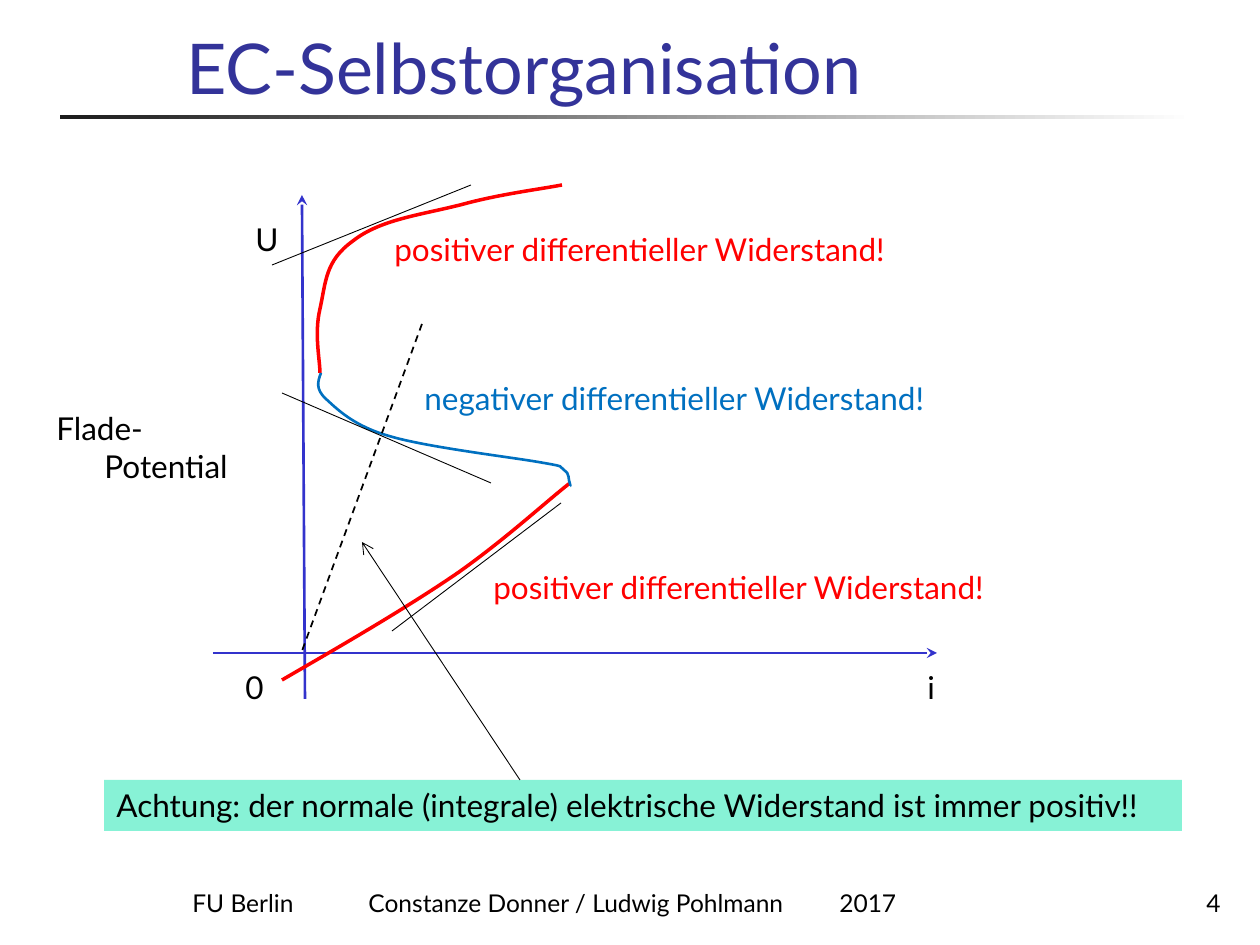
from dataclasses import dataclass

from lxml.etree import SubElement
from pptx import Presentation
from pptx.dml.color import RGBColor as Rgb
from pptx.enum.dml import MSO_LINE as Dash
from pptx.enum.shapes import MSO_CONNECTOR as Connector, MSO_SHAPE as Preset
from pptx.enum.text import MSO_ANCHOR as Anchor, PP_ALIGN as Align
from pptx.oxml.ns import qn
from pptx.util import Emu, Pt

PX = 914400 / 126


@dataclass(frozen=True)
class Theme:
    font: str = "Lato"
    title_size: int = 40
    label_size: int = 18
    footer_size: int = 14
    title: str = "333399"
    ink: str = "000000"
    axis: str = "3333CC"
    positive: str = "FF0000"
    negative: str = "0070C0"
    notice: str = "00E4A8"
    rule_start: str = "1C1C1C"
    rule_end: str = "FFFFFF"


THEME = Theme()


def px(*lengths):
    return [Emu(round(length * PX)) for length in lengths]


def rgb(color):
    return Rgb.from_string(color)


def write(frame, text, size=THEME.label_size, color=THEME.ink, align=Align.LEFT,
          anchor=Anchor.TOP, wrap=False):
    frame.word_wrap = wrap
    frame.vertical_anchor = anchor
    paragraph = frame.paragraphs[0]
    paragraph.text = text
    paragraph.alignment = align
    font = paragraph.font
    font.name, font.size, font.color.rgb = THEME.font, Pt(size), rgb(color)
    return paragraph


def add_text(slide, text, box, **style):
    return write(slide.shapes.add_textbox(*px(*box)).text_frame, text, **style)


def add_bar(slide, box):
    bar = slide.shapes.add_shape(Preset.RECTANGLE, *px(*box))
    bar.shadow.inherit = False
    bar.line.fill.background()
    return bar


def add_line(slide, start, end, color=THEME.ink, width=0.5, arrow=None, dash=None):
    line = slide.shapes.add_connector(Connector.STRAIGHT, *px(*start, *end))
    line.line.color.rgb, line.line.width = rgb(color), Pt(width)
    if dash:
        line.line.dash_style = dash
    properties = line.element.spPr
    if arrow:
        SubElement(properties.get_or_add_ln(), qn("a:tailEnd"), type=arrow)
    SubElement(properties, qn("a:effectLst"))


def add_curve(slide, points, color, width):
    """Draw cubic curves: a start point, then three points for each curve."""
    builder = slide.shapes.build_freeform(*points[0], scale=PX)
    builder.add_line_segments(points[1:], close=False)
    curve = builder.convert_to_shape()
    curve.shadow.inherit = False
    curve.fill.background()
    curve.line.color.rgb, curve.line.width = rgb(color), Pt(width)
    segments = list(curve.element.iter(qn("a:lnTo")))
    outline = segments[0].getparent()
    for first in range(0, len(segments), 3):
        bezier = SubElement(outline, qn("a:cubicBezTo"))
        for segment in segments[first:first + 3]:
            bezier.append(segment[0])
            outline.remove(segment)


def add_header(slide):
    rule = add_bar(slide, (60, 115, 1134, 4))
    rule.fill.gradient()
    rule.fill.gradient_angle = 0
    colors = (THEME.rule_start, THEME.rule_end)
    for position, (stop, color) in enumerate(zip(rule.fill.gradient_stops, colors)):
        stop.position, stop.color.rgb = position, rgb(color)
    add_text(slide, "EC-Selbstorganisation", (174, 29, 1058, 86),
             size=THEME.title_size, color=THEME.title, anchor=Anchor.BOTTOM, wrap=True)


def add_axes(slide):
    add_line(slide, (305, 699), (302, 195), THEME.axis, 1.5, "stealth")
    add_line(slide, (213, 653), (937, 653), THEME.axis, 1.5, "stealth")
    for text, box in (("U", (243, 214, 47, 50)), ("i", (915, 662, 33, 50)),
                      ("0", (233, 662, 43, 50))):
        add_text(slide, text, box)
    # Hanging indent for the second line
    flade = add_text(slide, "Flade-Potential", (44, 403, 230, 50), wrap=True)
    indent = px(48)[0]
    properties = flade._p.get_or_add_pPr()
    properties.set("marL", str(indent))
    properties.set("indent", str(-indent))


def add_characteristic(slide):
    lower = [(282, 680), (318, 659), (401, 612), (459, 572),
             (507, 538), (548, 500), (570, 483)]
    upper = [(320, 373), (320, 360), (314, 334), (320, 309),
             (326, 282), (325, 261), (353, 241),
             (381, 219), (422, 215), (464, 204),
             (501, 194), (542, 189), (562, 185)]
    middle = [(321, 373), (318, 381), (315, 389), (326, 399),
              (338, 410), (354, 426), (389, 436),
              (425, 447), (509, 457), (538, 462),
              (567, 467), (559, 466), (564, 470),
              (570, 473), (568, 480), (570, 484),
              (571, 486), (570, 486), (570, 486)]
    add_curve(slide, lower, THEME.positive, 2)
    add_curve(slide, upper, THEME.positive, 2)
    add_curve(slide, middle, THEME.negative, 1.5)

    # Tangents
    for start, end in (((561, 503), (392, 631)), ((282, 393), (491, 483)),
                       ((471, 185), (272, 265))):
        add_line(slide, start, end)

    # Sign of the slope on each branch
    for sign, color, box in (("positiver", THEME.positive, (382, 224, 518, 50)),
                             ("negativer", THEME.negative, (412, 373, 527, 50)),
                             ("positiver", THEME.positive, (481, 562, 518, 50))):
        add_text(slide, f"{sign} differentieller Widerstand!", box, color=color)


def add_notice(slide):
    notice = add_bar(slide, (104, 780, 1078, 51))
    notice.fill.solid()
    notice.fill.fore_color.rgb = rgb(THEME.notice)
    tint = next(notice.element.spPr.iter(qn("a:srgbClr")))
    SubElement(tint, qn("a:alpha"), val="47000")
    write(notice.text_frame, "Achtung: der normale (integrale) elektrische "
          "Widerstand ist immer positiv!!", wrap=True)
    # Integral resistance and its pointer
    add_line(slide, (422, 324), (302, 651), width=1, dash=Dash.DASH)
    add_line(slide, (520, 780), (362, 542), arrow="arrow")


def add_footer(slide):
    for text, left, width, align in (
            ("FU Berlin", 180, 140, Align.LEFT),
            ("Constanze Donner / Ludwig Pohlmann", 356, 450, Align.LEFT),
            ("2017", 827, 100, Align.LEFT),
            ("4", 1067, 166, Align.RIGHT)):
        add_text(slide, text, (left, 861, width, 63), size=THEME.footer_size,
                 align=align, anchor=Anchor.BOTTOM, wrap=True)


def main():
    deck = Presentation()
    deck.slide_width, deck.slide_height = px(1260, 945)
    slide = deck.slides.add_slide(deck.slide_layouts[6])
    add_header(slide)
    add_axes(slide)
    add_characteristic(slide)
    add_notice(slide)
    add_footer(slide)
    deck.save("out.pptx")


if __name__ == "__main__":
    main()
